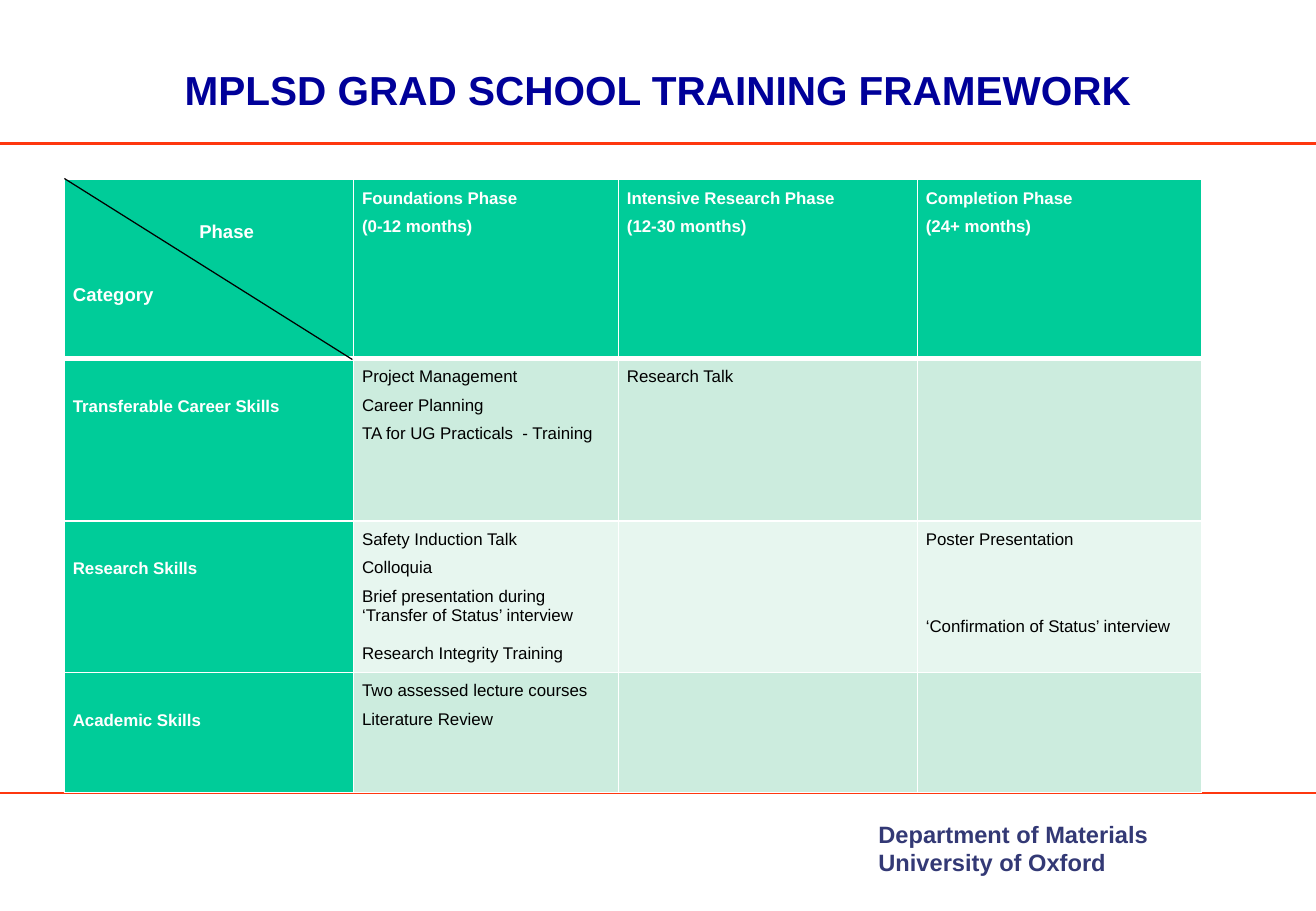
from dataclasses import dataclass

from lxml.etree import SubElement
from pptx import Presentation
from pptx.dml.color import RGBColor
from pptx.enum.shapes import MSO_CONNECTOR
from pptx.enum.text import MSO_ANCHOR, PP_ALIGN
from pptx.oxml.ns import qn
from pptx.util import Inches, Pt

COLORS = {
    "title": "000099", "rule": "FE370F", "footer": "333975",
    "head": "00CC99", "band": "CCECDE", "light": "E7F6EF",
    "white": "FFFFFF", "black": "000000",
}
COL_WIDTHS = (2.38, 2.18, 2.46, 2.34)
ROW_HEIGHTS = (1.47, 1.34, 1.16, 0.99)
LABEL_TOP = 0.24


@dataclass
class Line:
    text: str
    before: float = 0
    spacing: float = 1.5
    indent: float = 0


@dataclass
class CellSpec:
    lines: tuple = ()
    fill: str = "head"
    color: str = "white"
    bold: bool = True
    size: float = 10
    top: float = 0


@dataclass
class Rule:
    x1: float
    y1: float
    x2: float
    y2: float
    color: str
    width: float


def rgb(name: str) -> RGBColor:
    return RGBColor.from_string(COLORS[name])


def header(*texts: str) -> CellSpec:
    return CellSpec(tuple(Line(t) for t in texts))


def label(text: str) -> CellSpec:
    return CellSpec((Line(text),), top=LABEL_TOP)


def body(fill: str, *lines: Line) -> CellSpec:
    return CellSpec(lines, fill, "black", False)


def style_font(font, size: float, color: str, bold: bool) -> None:
    font.name, font.size, font.bold = "Arial", Pt(size), bold
    font.color.rgb = rgb(color)


def draw_rule(slide, rule: Rule) -> None:
    ends = [Inches(v) for v in (rule.x1, rule.y1, rule.x2, rule.y2)]
    c = slide.shapes.add_connector(MSO_CONNECTOR.STRAIGHT, *ends)
    c.line.color.rgb = rgb(rule.color)
    c.line.width = Pt(rule.width)
    SubElement(c._element.spPr, qn("a:effectLst"))


def add_borders(cell, top: float, bottom: float) -> None:
    tc_pr = cell._tc.get_or_add_tcPr()
    for side, width in (("L", 1), ("R", 1), ("T", top), ("B", bottom)):
        ln = SubElement(tc_pr, qn(f"a:ln{side}"), w=str(Pt(width)))
        fill = SubElement(ln, qn("a:solidFill"))
        SubElement(fill, qn("a:srgbClr"), val=COLORS["white"])


def fill_cell(cell, spec: CellSpec, row: int) -> None:
    add_borders(cell, 3 if row == 1 else 1, 3 if row == 0 else 1)
    cell.fill.solid()
    cell.fill.fore_color.rgb = rgb(spec.fill)
    cell.margin_left = cell.margin_right = Inches(0.07)
    cell.margin_top, cell.margin_bottom = Inches(spec.top), 0
    tf = cell.text_frame
    for i, line in enumerate(spec.lines):
        p = tf.add_paragraph() if i else tf.paragraphs[0]
        p.text = line.text
        p.alignment = PP_ALIGN.JUSTIFY
        p.line_spacing = line.spacing
        if line.before:
            p.space_before = Pt(line.before)
        if line.indent:
            p._p.get_or_add_pPr().set("marL", str(Inches(line.indent)))
        style_font(p.font, spec.size, spec.color, spec.bold)


ROWS = (
    (CellSpec((Line("Phase", indent=1.04), Line("Category", before=19)),
              size=11, top=0.26),
     header("Foundations Phase", "(0-12 months)"),
     header("Intensive Research Phase", "(12-30 months)"),
     header("Completion Phase", "(24+ months)")),
    (label("Transferable Career Skills"),
     body("band", Line("Project Management"), Line("Career Planning"),
          Line("TA for UG Practicals  - Training")),
     body("band", Line("Research Talk")),
     body("band")),
    (label("Research Skills"),
     body("light", Line("Safety Induction Talk"), Line("Colloquia"),
          Line("Brief presentation during"),
          Line("‘Transfer of Status’ interview", spacing=1),
          Line("Research Integrity Training", before=11.5, spacing=1)),
     body("light"),
     body("light", Line("Poster Presentation"),
          Line("‘Confirmation of Status’ interview", before=34.5))),
    (label("Academic Skills"),
     body("band", Line("Two assessed lecture courses"), Line("Literature Review")),
     body("band"),
     body("band")),
)

prs = Presentation()
prs.slide_width, prs.slide_height = Inches(10.83), Inches(7.5)
slide = prs.slides.add_slide(prs.slide_layouts[5])

# Rules above and below the content
for y in (1.18, 6.53):
    draw_rule(slide, Rule(0, y, 10.83, y, "rule", 1.5))

# Department name
box = slide.shapes.add_textbox(Inches(7.13), Inches(6.7), Inches(2.62), Inches(0.57))
tf = box.text_frame
tf.word_wrap = True
tf.text = "Department of Materials\nUniversity of Oxford"
for p in tf.paragraphs:
    style_font(p.font, 14, "footer", True)

# Title
title = slide.shapes.title
title.left, title.top = Inches(0.83), Inches(0.32)
title.width, title.height = Inches(9.17), Inches(0.83)
tf = title.text_frame
tf.text = "MPLSD GRAD SCHOOL TRAINING FRAMEWORK"
tf.vertical_anchor = MSO_ANCHOR.MIDDLE
p = tf.paragraphs[0]
p.alignment = PP_ALIGN.CENTER
style_font(p.font, 24, "title", True)

# Training table
table = slide.shapes.add_table(
    len(ROW_HEIGHTS), len(COL_WIDTHS), Inches(0.53), Inches(1.48),
    Inches(sum(COL_WIDTHS)), Inches(sum(ROW_HEIGHTS))).table
table.first_row = table.horz_banding = False
for col, width in zip(table.columns, COL_WIDTHS):
    col.width = Inches(width)
for row, height in zip(table.rows, ROW_HEIGHTS):
    row.height = Inches(height)
for r, specs in enumerate(ROWS):
    for c, spec in enumerate(specs):
        fill_cell(table.cell(r, c), spec, r)

# Diagonal of the corner cell
draw_rule(slide, Rule(0.53, 1.47, 2.9, 2.96, "black", 0.75))

prs.save("out.pptx")
